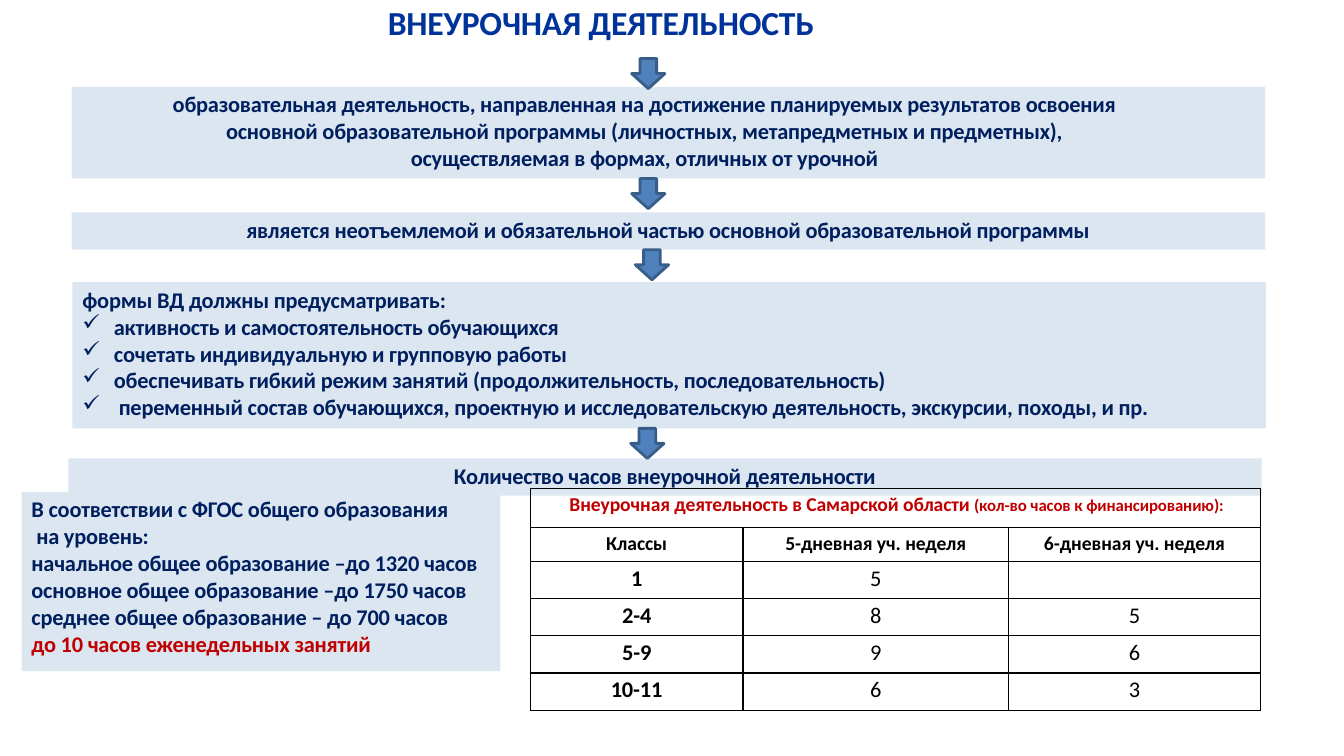
from lxml import etree
from pptx import Presentation
from pptx.dml.color import RGBColor
from pptx.enum import shapes, text
from pptx.oxml.ns import qn
from pptx.util import Pt

NAVY = RGBColor(0x00, 0x1F, 0x5F)
TITLE_BLUE = RGBColor(0x00, 0x33, 0x99)
PALE_BLUE = RGBColor(0xDC, 0xE6, 0xF1)
ARROW_FILL = RGBColor(0x4F, 0x81, 0xBC)
ARROW_LINE = RGBColor(0x38, 0x5D, 0x89)
RED = RGBColor(0xC0, 0x00, 0x00)
BLACK = RGBColor(0x00, 0x00, 0x00)

LEFT, CENTER = text.PP_ALIGN.LEFT, text.PP_ALIGN.CENTER
PANEL_WIDTH = 852.5
LINE_HEIGHT = 26.6

PURPOSE = (
    "образовательная деятельность, направленная на достижение планируемых результатов освоения\v"
    "основной образовательной программы (личностных, метапредметных и предметных),\v"
    "осуществляемая в формах, отличных от урочной"
)
FORMS = [
    "формы ВД должны предусматривать:",
    "активность и самостоятельность обучающихся",
    "сочетать индивидуальную и групповую работы",
    "обеспечивать гибкий режим занятий (продолжительность, последовательность)",
    "переменный состав обучающихся, проектную и исследовательскую деятельность, экскурсии, походы, и пр.",
]
STANDARD = [
    "В соответствии с ФГОС общего образования\v на уровень:",
    "начальное общее образование –до 1320 часов",
    "основное общее образование –до 1750 часов",
    "среднее общее образование – до 700 часов",
    "до 10 часов еженедельных занятий",
]
REGION_HEADING = ("Внеурочная деятельность в Самарской области ", "(кол-во часов к финансированию):")
HOURS = [
    ["Классы", "5-дневная уч. неделя", "6-дневная уч. неделя"],
    ["1", "5", ""],
    ["2-4", "8", "5"],
    ["5-9", "9", "6"],
    ["10-11", "6", "3"],
]
COLUMN_WIDTHS = [152, 189.5, 180]
ROW_HEIGHTS = [27.8, 24] + [LINE_HEIGHT] * 4


def style_span(span, size, color, bold=True, spacing=-15):
    span.font.name = "Calibri"
    span.font.size = Pt(size)
    span.font.bold = bold
    span.font.color.rgb = color
    span.font._element.set("spc", str(spacing))


def write_lines(frame, lines, size=16, color=NAVY, align=LEFT):
    frame.text = "\n".join(lines)
    for para in frame.paragraphs:
        para.alignment = align
        for span in para.runs:
            style_span(span, size, color)


def set_margins(frame, left=0, top=2.6, right=0):
    frame.margin_left, frame.margin_top = Pt(left), Pt(top)
    frame.margin_right, frame.margin_bottom = Pt(right), Pt(0)


def add_title(page, left, top, width, height):
    frame = page.shapes.add_textbox(Pt(left), Pt(top), Pt(width), Pt(height)).text_frame
    frame.word_wrap = True
    set_margins(frame, 1, 1)
    write_lines(frame, ["ВНЕУРОЧНАЯ ДЕЯТЕЛЬНОСТЬ"], 24, TITLE_BLUE)


def add_panel(page, left, top, width, height, lines, align=CENTER, indent=0, right=0):
    panel = page.shapes.add_shape(
        shapes.MSO_SHAPE.RECTANGLE, Pt(left), Pt(top), Pt(width), Pt(height))
    panel.shadow.inherit = False
    panel.fill.solid()
    panel.fill.fore_color.rgb = PALE_BLUE
    panel.line.fill.background()
    frame = panel.text_frame
    frame.word_wrap = True
    frame.vertical_anchor = text.MSO_ANCHOR.TOP
    set_margins(frame, indent, right=right)
    write_lines(frame, lines, align=align)
    return frame


def add_arrow(page, left, top):
    arrow = page.shapes.add_shape(
        shapes.MSO_SHAPE.DOWN_ARROW, Pt(left), Pt(top), Pt(23.8), Pt(21.5))
    arrow.shadow.inherit = False
    arrow.fill.solid()
    arrow.fill.fore_color.rgb = ARROW_FILL
    arrow.line.color.rgb = ARROW_LINE
    arrow.line.width = Pt(2)


def add_forms(page, left, top, width, height):
    frame = add_panel(page, left, top, width, height, FORMS, LEFT, 7.2)
    items = frame.paragraphs[1:]
    for para in items:
        hanging = 26 if para is items[-1] else 22.5
        properties = para._p.get_or_add_pPr()
        properties.set("marL", str(Pt(hanging)))
        properties.set("indent", str(-Pt(hanging)))
        etree.SubElement(properties, qn("a:buChar")).set("char", "✓")


def add_standard(page, left, top, width, height):
    frame = add_panel(page, left, top, width, height, STANDARD, LEFT, 7.2)
    frame.paragraphs[-1].runs[0].font.color.rgb = RED


def border_cell(cell):
    properties = cell._tc.get_or_add_tcPr()
    for side in ("lnL", "lnR", "lnT", "lnB"):
        line = etree.SubElement(properties, qn(f"a:{side}"), w=str(Pt(1)))
        fill = etree.SubElement(line, qn("a:solidFill"))
        etree.SubElement(fill, qn("a:srgbClr"), val=str(BLACK))
    cell.fill.background()


def add_hours_table(page, left, top):
    table = page.shapes.add_table(
        len(ROW_HEIGHTS), len(COLUMN_WIDTHS), Pt(left), Pt(top),
        Pt(sum(COLUMN_WIDTHS)), Pt(sum(ROW_HEIGHTS))).table
    table.first_row = table.horz_banding = False
    for column, width in zip(table.columns, COLUMN_WIDTHS):
        column.width = Pt(width)
    for row, height in zip(table.rows, ROW_HEIGHTS):
        row.height = Pt(height)
    for cell in table.iter_cells():
        border_cell(cell)
        set_margins(cell)

    heading = table.cell(0, 0)
    heading.merge(table.cell(0, len(COLUMN_WIDTHS) - 1))
    heading.margin_left = Pt(28)
    para = heading.text_frame.paragraphs[0]
    for words, size in zip(REGION_HEADING, (14, 12)):
        span = para.add_run()
        span.text = words
        style_span(span, size, RED, spacing=-8)

    for i, values in enumerate(HOURS):
        for j, value in enumerate(values):
            para = table.cell(i + 1, j).text_frame.paragraphs[0]
            para.text = value
            para.alignment = CENTER
            for span in para.runs:
                style_span(span, 14 if i == 0 else 16, BLACK, i == 0 or j == 0, -5)


def add_activity_slide(deck):
    page = deck.slides.add_slide(deck.slide_layouts[6])
    add_title(page, 276, 0.7, 573, 31)
    add_panel(page, 51.2, 62, PANEL_WIDTH, 65.5, [PURPOSE], right=34)
    add_panel(page, 51.2, 151.8, PANEL_WIDTH, LINE_HEIGHT,
              ["является неотъемлемой и обязательной частью основной образовательной программы"])
    add_standard(page, 15.4, 351.4, 342, 128)
    add_panel(page, 48.8, 327.4, PANEL_WIDTH, LINE_HEIGHT,
              ["Количество часов внеурочной деятельности"])
    add_forms(page, 51.8, 201.6, PANEL_WIDTH, 104.4)
    for left, top in ((451.2, 41.8), (451.2, 127.6), (453.8, 178.4), (450.5, 306)):
        add_arrow(page, left, top)
    add_hours_table(page, 378.8, 349.2)


def main():
    deck = Presentation()
    deck.slide_width, deck.slide_height = Pt(960), Pt(540)
    add_activity_slide(deck)
    deck.save("out.pptx")


if __name__ == "__main__":
    main()
